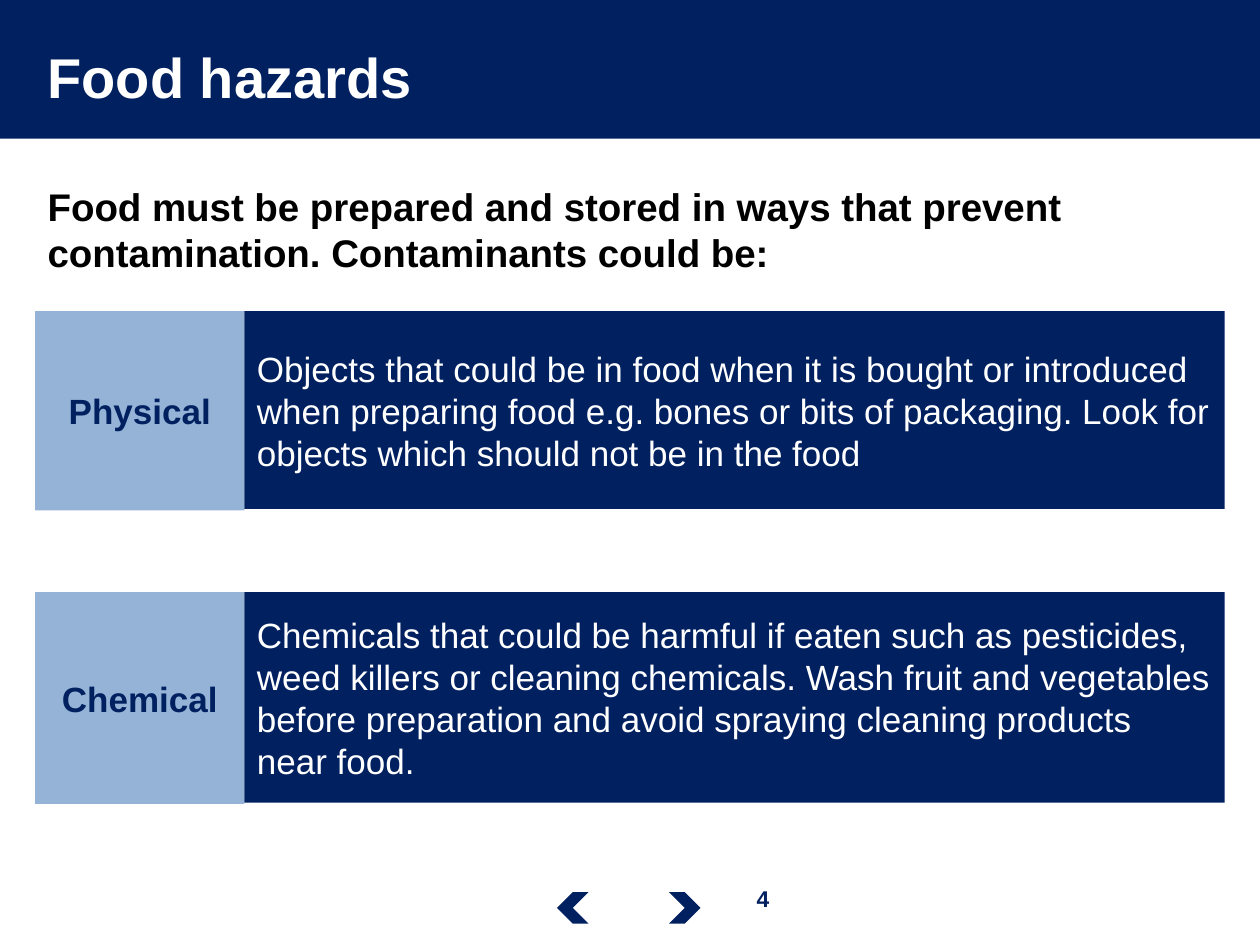
from pptx import Presentation
from pptx.dml.color import RGBColor
from pptx.enum.shapes import MSO_SHAPE as Preset
from pptx.enum.text import MSO_ANCHOR as Anchor, PP_ALIGN as Align
from pptx.util import Inches, Pt

COLORS = {"navy": "002060", "blue": "95B3D7", "white": "FFFFFF", "black": "000000"}

STYLES = {
    "title": {"size": Pt(32), "bold": True, "color": "white"},
    "intro": {"size": Pt(22), "bold": True, "color": "black"},
    "label": {"size": Pt(20), "bold": True, "color": "navy"},
    "detail": {"size": Pt(20), "bold": False, "color": "white"},
    "number": {"size": Pt(13), "bold": True, "color": "navy"},
}

HAZARDS = [
    ("Physical", 2.47, 1.58,
     "Objects that could be in food when it is bought or introduced when preparing "
     "food e.g. bones or bits of packaging. Look for objects which should not be in the food"),
    ("Chemical", 4.7, 1.68,
     "Chemicals that could be harmful if eaten such as pesticides, weed killers or "
     "cleaning chemicals. Wash fruit and vegetables before preparation and avoid "
     "spraying cleaning products \vnear food."),
]
LEFT, LABEL_WIDTH, DETAIL_WIDTH = 0.28, 1.66, 7.78


def write_text(shape, text, style, align=Align.LEFT, anchor=Anchor.MIDDLE):
    """Put one styled paragraph into a shape."""
    frame = shape.text_frame
    frame.word_wrap = True
    frame.vertical_anchor = anchor
    paragraph = frame.paragraphs[0]
    paragraph.text = text
    paragraph.alignment = align
    for run in paragraph.runs:
        run.font.name = "Arial"
        for name, value in STYLES[style].items():
            if name == "color":
                run.font.color.rgb = RGBColor.from_string(COLORS[value])
            else:
                setattr(run.font, name, value)


def add_block(slide, box, color, preset=Preset.RECTANGLE):
    """Add a flat filled shape without outline or shadow."""
    shape = slide.shapes.add_shape(preset, *map(Inches, box))
    shape.shadow.inherit = False
    shape.fill.solid()
    shape.fill.fore_color.rgb = RGBColor.from_string(COLORS[color])
    shape.line.fill.background()
    return shape


def add_text(slide, box, text, style, **layout):
    """Add a text box holding one styled paragraph."""
    write_text(slide.shapes.add_textbox(*map(Inches, box)), text, style, **layout)


def add_hazard(slide, label, top, height, detail):
    """Add a hazard row: a label block beside its description."""
    label_block = add_block(slide, (LEFT, top, LABEL_WIDTH, height), "blue")
    write_text(label_block, label, "label", align=Align.CENTER)
    detail_box = (LEFT + LABEL_WIDTH, top, DETAIL_WIDTH, height - 0.01)
    write_text(add_block(slide, detail_box, "navy"), detail, "detail")


def add_navigation(slide):
    """Add the back and forward chevrons and the page number."""
    for left, rotation in ((4.42, 180), (5.31, 0)):
        chevron = add_block(slide, (left, 7.08, 0.25, 0.25), "navy", Preset.CHEVRON)
        chevron.rotation = rotation
    add_text(slide, (5.7, 6.97, 0.71, 0.32), "4", "number",
             align=Align.CENTER, anchor=Anchor.TOP)


def main():
    """Build the food hazards slide and save it."""
    presentation = Presentation()
    presentation.slide_width, presentation.slide_height = Inches(10), Inches(7.5)
    slide = presentation.slides.add_slide(presentation.slide_layouts[6])
    add_block(slide, (-0.02, 0, 10.02, 1.1), "navy")
    add_navigation(slide)
    add_text(slide, (LEFT, 0.1, 7.9, 1.01), "Food hazards", "title")
    add_text(slide, (LEFT, 1.4, 9.47, 0.98),
             "Food must be prepared and stored in ways that prevent contamination. "
             "Contaminants could be:", "intro", anchor=Anchor.TOP)
    for hazard in HAZARDS:
        add_hazard(slide, *hazard)
    presentation.save("out.pptx")


if __name__ == "__main__":
    main()
